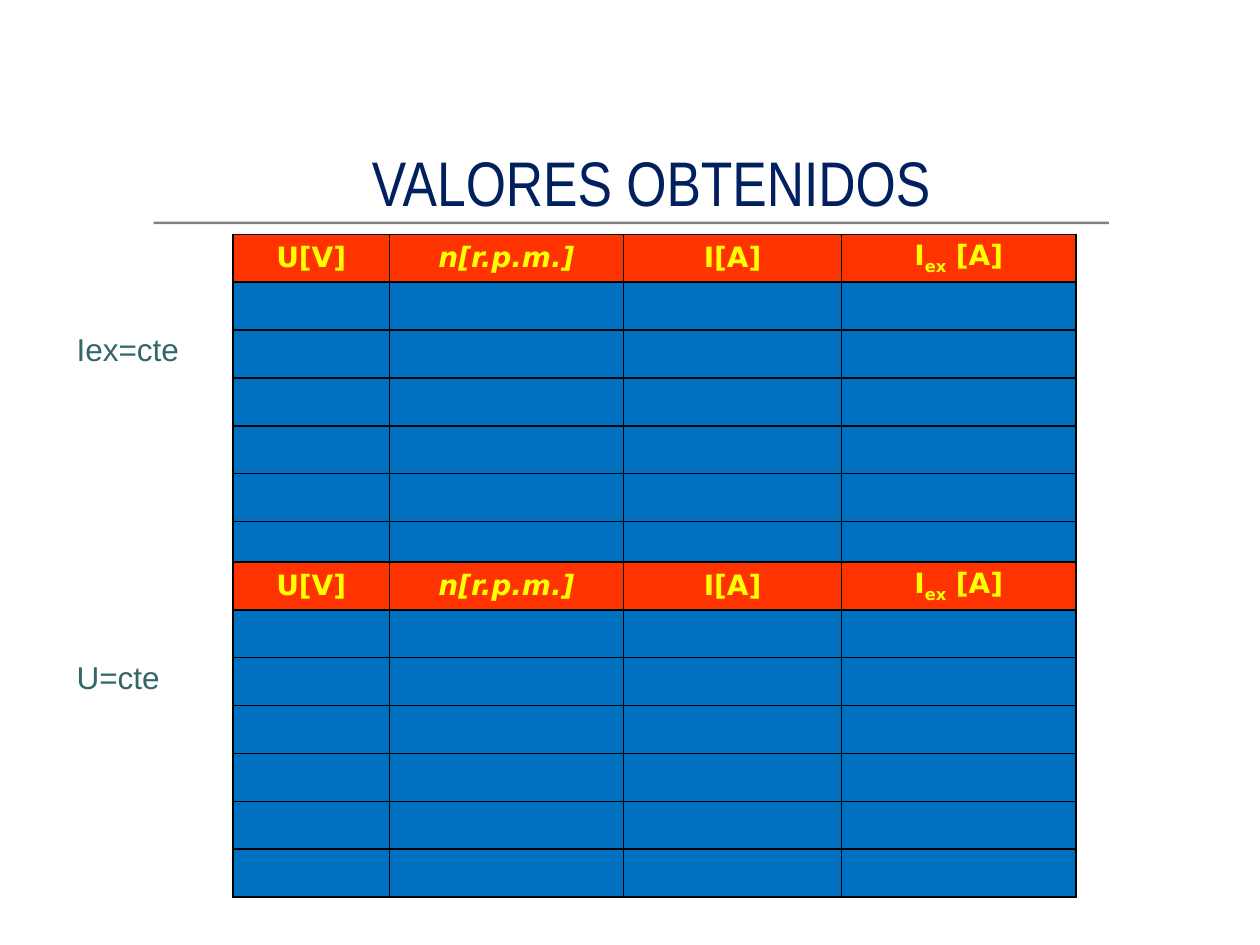
from lxml.etree import SubElement
from pptx import Presentation
from pptx.dml.color import RGBColor
from pptx.enum.shapes import MSO_SHAPE
from pptx.enum.text import MSO_ANCHOR, MSO_AUTO_SIZE, PP_ALIGN
from pptx.oxml.ns import qn
from pptx.util import Inches, Pt


def rgb(color):
    return RGBColor.from_string(color)


def add_run(paragraph, text, size, font_name, color):
    run = paragraph.add_run()
    run.text = text
    run.font.size = Pt(size)
    run.font.name = font_name
    run.font.color.rgb = rgb(color)
    return run


presentation = Presentation()
presentation.slide_width = Inches(10)
presentation.slide_height = Inches(7.5)
slide = presentation.slides.add_slide(presentation.slide_layouts[5])

# Rule under the title
rule = slide.shapes.add_shape(
    MSO_SHAPE.RECTANGLE, Inches(1.22), Inches(1.76), Inches(7.58), Inches(0.02))
rule.shadow.inherit = False
rule.fill.solid()
rule.fill.fore_color.rgb = rgb("808080")
rule.line.fill.background()

# Title
title = slide.shapes.title
title.left, title.top = Inches(0.75), Inches(0.9)
title.width, title.height = Inches(8.84), Inches(1.08)
title.text_frame.vertical_anchor = MSO_ANCHOR.MIDDLE
heading = title.text_frame.paragraphs[0]
heading.alignment = PP_ALIGN.CENTER
add_run(heading, "VALORES OBTENIDOS", 36, "Arial Narrow", "002060")

# Tables of measurements: a header row and six rows to fill in
column_widths = [1.24, 1.86, 1.73, 1.86]
headers = [["U[V]"], ["n[r.p.m.]"], ["I[A]"], ["I", "ex", " [A]"]]
row_count, row_height = 7, 0.38

for table_top in (1.86, 4.46):
    measurements = slide.shapes.add_table(
        row_count, len(headers), Inches(1.85), Inches(table_top),
        Inches(sum(column_widths)), Inches(row_count * row_height)).table
    for column, width in zip(measurements.columns, column_widths):
        column.width = Inches(width)

    for row_index, row in enumerate(measurements.rows):
        row.height = Inches(row_height)
        for header, cell in zip(headers, row.cells):
            cell.margin_left = cell.margin_right = Inches(0.05)
            cell.margin_top = cell.margin_bottom = 0

            # Cell borders come before the fill
            properties = cell._tc.get_or_add_tcPr()
            for side in ("a:lnL", "a:lnR", "a:lnT", "a:lnB"):
                border = SubElement(properties, qn(side), w=str(Pt(1)))
                border_fill = SubElement(border, qn("a:solidFill"))
                SubElement(border_fill, qn("a:srgbClr"), val="000000")
            cell.fill.solid()
            cell.fill.fore_color.rgb = rgb("0070C0" if row_index else "FF3300")

            paragraph = cell.text_frame.paragraphs[0]
            paragraph.alignment = PP_ALIGN.CENTER
            if row_index == 0:
                cell.vertical_anchor = MSO_ANCHOR.MIDDLE
                for text in header:
                    run = add_run(paragraph, text, 16, "DejaVu Sans", "FFFF00")
                    run.font.bold = True
                    run.font.italic = text.startswith("n")
                    if text == "ex":
                        run._r.get_or_add_rPr().set("baseline", "-25000")
            else:
                # Grey bar bullet in a cell still to be filled in
                bullet = paragraph._p.get_or_add_pPr()
                bullet_color = SubElement(bullet, qn("a:buClr"))
                SubElement(bullet_color, qn("a:srgbClr"), val="808080")
                SubElement(bullet, qn("a:buSzPct"), val="70000")
                SubElement(bullet, qn("a:buFont"), typeface="DejaVu Sans")
                SubElement(bullet, qn("a:buChar"), char="▍")
                SubElement(paragraph._p, qn("a:endParaRPr"), sz="1600")

# Quantity held constant in each table
for label, top, width in (("Iex=cte", 2.57, 1.18), ("U=cte", 5.17, 1.1)):
    condition = slide.shapes.add_textbox(
        Inches(0.51), Inches(top), Inches(width), Inches(0.4)).text_frame
    condition.word_wrap = True
    condition.auto_size = MSO_AUTO_SIZE.SHAPE_TO_FIT_TEXT
    add_run(condition.paragraphs[0], label, 18, "Arial", "336666")

presentation.save("out.pptx")
